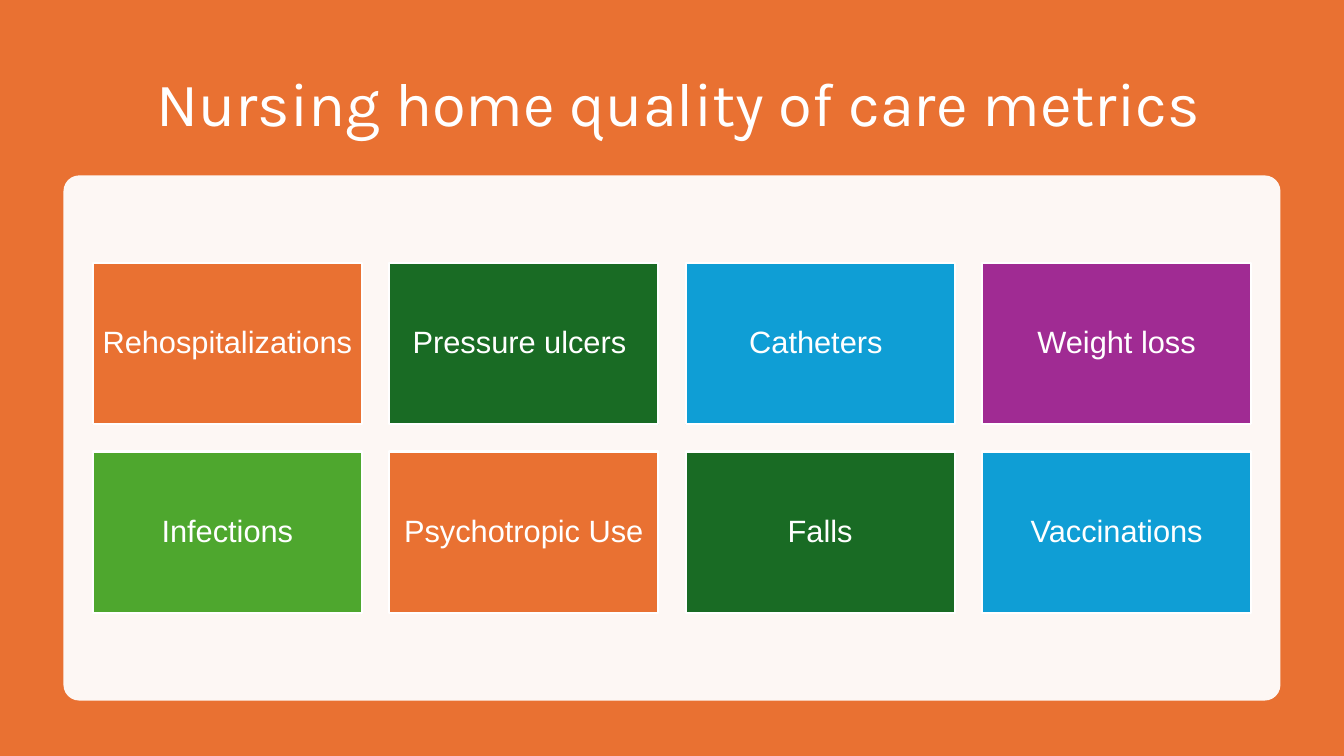
from dataclasses import dataclass

from lxml.etree import SubElement
from pptx import Presentation
from pptx.dml.color import RGBColor
from pptx.enum.shapes import MSO_SHAPE
from pptx.enum.text import MSO_ANCHOR, MSO_AUTO_SIZE, PP_ALIGN
from pptx.oxml.ns import qn
from pptx.shapes.autoshape import Shape
from pptx.slide import Slide
from pptx.util import Inches, Pt


@dataclass(frozen=True)
class Theme:
    orange: str = "E97132"
    dark_green: str = "196B24"
    blue: str = "0F9ED5"
    purple: str = "A02B93"
    light_green: str = "4EA72E"
    white: str = "FFFFFF"
    title_font: str = "Karla"
    tile_font: str = "Arial"
    title_size: int = 44
    tile_size: int = 22
    outline_width: float = 1.5
    line_spacing: float = 0.9
    panel_opacity: int = 95


@dataclass(frozen=True)
class Grid:
    left: float = 0.92
    top: float = 2.61
    tile_width: float = 2.67
    tile_height: float = 1.6
    gap: float = 0.27
    columns: int = 4

    def place(self, index: int) -> tuple[int, int, int, int]:
        row, column = divmod(index, self.columns)
        return (
            Inches(self.left + column * (self.tile_width + self.gap)),
            Inches(self.top + row * (self.tile_height + self.gap)),
            Inches(self.tile_width),
            Inches(self.tile_height),
        )


@dataclass(frozen=True)
class Metric:
    label: str
    color: str


THEME = Theme()
GRID = Grid()
METRICS = (
    Metric("Rehospitalizations ", THEME.orange),
    Metric("Pressure ulcers ", THEME.dark_green),
    Metric("Catheters ", THEME.blue),
    Metric("Weight loss", THEME.purple),
    Metric("Infections", THEME.light_green),
    Metric("Psychotropic Use", THEME.orange),
    Metric("Falls", THEME.dark_green),
    Metric("Vaccinations", THEME.blue),
)


def fill_plain(shape: Shape, color: str) -> None:
    shape.shadow.inherit = False
    shape.fill.solid()
    shape.fill.fore_color.rgb = RGBColor.from_string(color)
    shape.line.fill.background()


def write_text(shape: Shape, text: str, font_name: str, size: int) -> None:
    frame = shape.text_frame
    frame.text = text
    frame.word_wrap = True
    frame.auto_size = MSO_AUTO_SIZE.NONE
    frame.vertical_anchor = MSO_ANCHOR.MIDDLE
    paragraph = frame.paragraphs[0]
    paragraph.alignment = PP_ALIGN.CENTER
    paragraph.line_spacing = THEME.line_spacing
    paragraph.font.name = font_name
    paragraph.font.size = Pt(size)
    paragraph.font.color.rgb = RGBColor.from_string(THEME.white)


def add_tile(slide: Slide, metric: Metric, index: int) -> None:
    tile = slide.shapes.add_shape(MSO_SHAPE.RECTANGLE, *GRID.place(index))
    fill_plain(tile, metric.color)
    tile.line.color.rgb = RGBColor.from_string(THEME.white)
    tile.line.width = Pt(THEME.outline_width)
    write_text(tile, metric.label, THEME.tile_font, THEME.tile_size)
    frame = tile.text_frame
    frame.margin_left = frame.margin_right = Inches(0.09)
    frame.margin_top = frame.margin_bottom = Inches(0.09)


def main() -> None:
    presentation = Presentation()
    presentation.slide_width = Inches(13.33)
    presentation.slide_height = Inches(7.5)
    slide = presentation.slides.add_slide(presentation.slide_layouts[5])

    title = slide.shapes.title
    title.left, title.top = Inches(0.91), Inches(0.51)
    title.width, title.height = Inches(11.5), Inches(1.1)
    write_text(
        title, " Nursing home quality of care metrics", THEME.title_font, THEME.title_size
    )

    backdrop = slide.shapes.add_shape(
        MSO_SHAPE.RECTANGLE, 0, 0, presentation.slide_width, presentation.slide_height
    )
    fill_plain(backdrop, THEME.orange)
    title.element.addprevious(backdrop.element)

    panel = slide.shapes.add_shape(
        MSO_SHAPE.ROUNDED_RECTANGLE, Inches(0.63), Inches(1.74), Inches(12.07), Inches(5.21)
    )
    panel.adjustments[0] = 0.03
    fill_plain(panel, THEME.white)
    panel_color = panel.element.spPr.find(qn("a:solidFill")).find(qn("a:srgbClr"))
    SubElement(panel_color, qn("a:alpha"), val=str(THEME.panel_opacity * 1000))

    for index, metric in enumerate(METRICS):
        add_tile(slide, metric, index)

    presentation.save("out.pptx")


if __name__ == "__main__":
    main()
